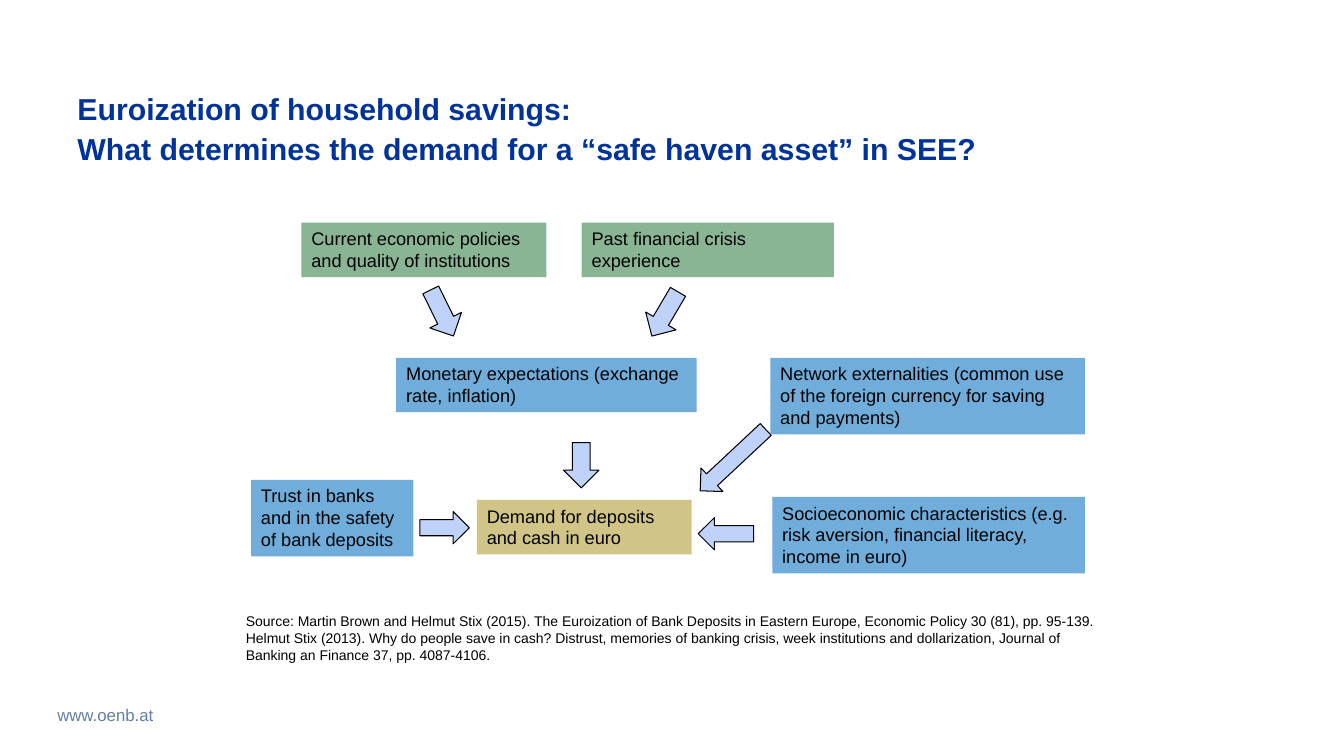
from pptx import Presentation
from pptx.dml.color import RGBColor
from pptx.enum.shapes import MSO_SHAPE as Shape
from pptx.enum.text import MSO_ANCHOR as Anchor, PP_ALIGN as Align
from pptx.util import Inches, Pt

COLORS = {
    "title": "003399", "site": "607EA9", "text": "000000",
    "green": "89B595", "blue": "70ADDB", "sand": "D0C586", "arrow": "BFD2FA",
}


def color(name):
    return RGBColor.from_string(COLORS[name])


def write(shape, lines, size, tone="text", bold=False, pitch=None):
    """Fill a shape with left-aligned paragraphs; pitch is the line height in points."""
    frame = shape.text_frame
    frame.word_wrap = True
    frame.vertical_anchor = Anchor.TOP
    for i, line in enumerate(lines):
        para = frame.add_paragraph() if i else frame.paragraphs[0]
        para.text = line
        para.alignment = Align.LEFT
        if pitch:
            para.line_spacing = Pt(pitch)
        font = para.font
        font.name, font.size, font.bold = "Arial", Pt(size), bold
        font.color.rgb = color(tone)


deck = Presentation()
deck.slide_width, deck.slide_height = Inches(13.33), Inches(7.5)
slide = deck.slides.add_slide(deck.slide_layouts[6])
shapes = slide.shapes

site = shapes.add_textbox(Inches(0.47), Inches(6.96), Inches(2.36), Inches(0.28))
write(site, ["www.oenb.at"], 12, "site", pitch=13)

title = shapes.add_textbox(Inches(0.67), Inches(0.82), Inches(12), Inches(0.88))
write(title, ["Euroization of household savings:\n"
              "What determines the demand for a “safe haven asset” in SEE?"],
      21.6, "title", bold=True, pitch=28)
title.text_frame.vertical_anchor = Anchor.MIDDLE

source = shapes.add_textbox(Inches(2.34), Inches(6.03), Inches(8.76), Inches(0.61))
write(source, [
    "Source: Martin Brown and Helmut Stix (2015). The Euroization of Bank Deposits "
    "in Eastern Europe, Economic Policy 30 (81), pp. 95-139.",
    "Helmut Stix (2013). Why do people save in cash? Distrust, memories of banking "
    "crisis, week institutions and dollarization, Journal of Banking an Finance 37, "
    "pp. 4087-4106.",
], 10)

# Factors: left, top, width, number of text lines, fill, label
factors = [
    (2.99, 2.21, 2.43, 2, "green", "Current economic policies and quality of institutions"),
    (5.77, 2.21, 2.5, 2, "green", "Past financial crisis experience"),
    (3.93, 3.55, 2.98, 2, "blue", "Monetary expectations (exchange rate, inflation)"),
    (7.64, 3.55, 3.12, 3, "blue",
     "Network externalities (common use of the foreign currency for saving and payments)"),
    (2.49, 4.76, 1.61, 3, "blue", "Trust in banks and in the safety of bank deposits"),
    (4.73, 4.96, 2.13, 2, "sand", "Demand for deposits and cash in euro"),
    (7.66, 4.93, 3.1, 3, "blue",
     "Socioeconomic characteristics (e.g. risk aversion, financial literacy, income in euro)"),
]
for left, top, width, rows, fill, label in factors:
    box = shapes.add_shape(Shape.RECTANGLE, Inches(left), Inches(top),
                           Inches(width), Inches(0.1 + 0.22 * rows))
    box.shadow.inherit = False
    box.fill.solid()
    box.fill.fore_color.rgb = color(fill)
    box.line.fill.background()
    write(box, [label], 13)

# Arrows: left, top, width, height, rotation
arrows = [
    (4.21, 2.85, 0.35, 0.51, 333.8),
    (6.42, 2.86, 0.35, 0.51, 30.5),
    (5.59, 4.39, 0.35, 0.45, 0),
    (7.11, 4.12, 0.32, 0.89, 46.9),
    (7.04, 5.02, 0.32, 0.55, 90),
    (4.25, 4.99, 0.32, 0.49, 270),
]
for left, top, width, height, turn in arrows:
    arrow = shapes.add_shape(Shape.DOWN_ARROW, Inches(left), Inches(top),
                             Inches(width), Inches(height))
    arrow.rotation = turn
    arrow.shadow.inherit = False
    arrow.fill.solid()
    arrow.fill.fore_color.rgb = color("arrow")
    arrow.line.color.rgb = color("text")
    arrow.line.width = Pt(0.75)

deck.save("out.pptx")
